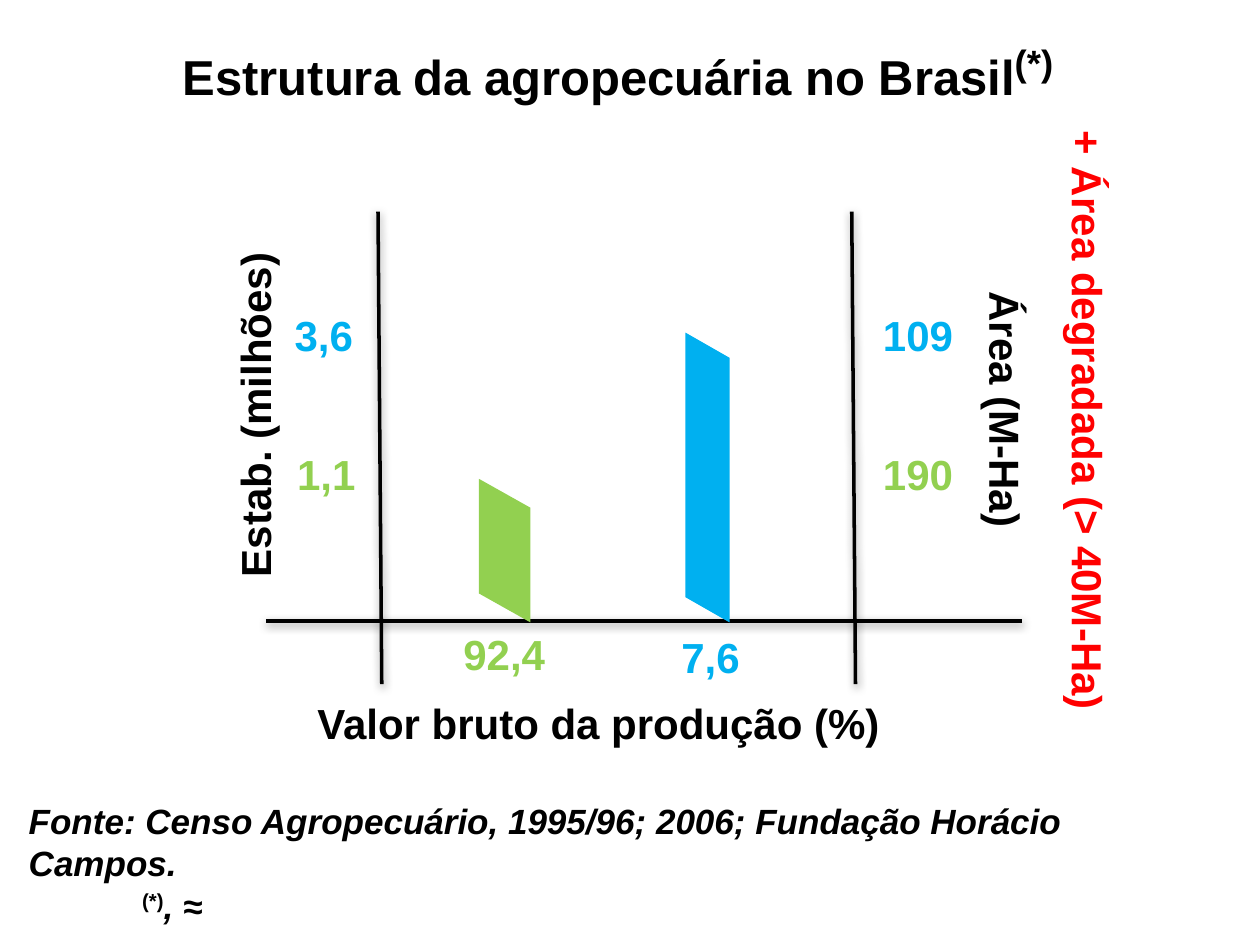
from lxml import etree
from pptx import Presentation
from pptx.dml.color import RGBColor
from pptx.enum.shapes import MSO_CONNECTOR
from pptx.enum.text import MSO_ANCHOR, MSO_AUTO_SIZE, PP_ALIGN
from pptx.util import Inches, Pt

STRAIGHT = MSO_CONNECTOR.STRAIGHT
TOP = MSO_ANCHOR.TOP
NO_AUTOFIT = MSO_AUTO_SIZE.NONE
CENTER = PP_ALIGN.CENTER
FONT = "Arial"
COLORS = {"black": "000000", "green": "92D050", "blue": "00B0F0", "red": "FF0000"}
LINE_SHADOW = (
    '<a:effectLst xmlns:a="http://schemas.openxmlformats.org/drawingml/2006/main">'
    '<a:outerShdw blurRad="63500" dist="20320" dir="5400000" rotWithShape="0">'
    '<a:srgbClr val="000000"><a:alpha val="38000"/></a:srgbClr>'
    '</a:outerShdw></a:effectLst>'
)


def format_run(run, size, color="black", italic=False, superscript=False):
    font = run.font
    font.name = FONT
    font.size = Pt(size)
    font.bold = True
    font.italic = italic
    font.color.rgb = RGBColor.from_string(COLORS[color])
    if superscript:
        run._r.get_or_add_rPr().set("baseline", "30000")


def add_label(text, left, top, width, height=0.5, size=24, color="black",
              rotation=0, italic=False):
    shape = slide.shapes.add_textbox(
        Inches(left), Inches(top), Inches(width), Inches(height))
    shape.rotation = rotation
    shape.text_frame.word_wrap = False
    shape.text_frame.text = text
    format_run(shape.text_frame.paragraphs[0].runs[0], size, color, italic)
    return shape


presentation = Presentation()
presentation.slide_width = Inches(10)
presentation.slide_height = Inches(7.5)
slide = presentation.slides.add_slide(presentation.slide_layouts[5])

title = slide.shapes.title
title.left, title.top = Inches(0.28), Inches(0.21)
title.width, title.height = Inches(9.25), Inches(0.57)
title.text_frame.text = "Estrutura da agropecuária no Brasil"
title.text_frame.auto_size = NO_AUTOFIT
title.text_frame.vertical_anchor = TOP
heading = title.text_frame.paragraphs[0]
heading.alignment = CENTER
format_run(heading.runs[0], 28)
title_mark = heading.add_run()
title_mark.text = "(*)"
format_run(title_mark, 36, superscript=True)

axes = [(3, 1.68, 3.03, 5.43), (6.76, 1.68, 6.79, 5.43), (8.11, 4.93, 2.11, 4.93)]
for axis in axes:
    connector = slide.shapes.add_connector(STRAIGHT, *map(Inches, axis))
    connector.line.color.rgb = RGBColor.from_string(COLORS["black"])
    connector.line.width = Pt(2)
    connector.element.spPr.append(etree.fromstring(LINE_SHADOW))

bars = [("green", 3.8, 4.21, 3.8, 0.23), ("blue", 5.44, 5.79, 2.64, 0.2)]
baseline = 4.94
for color, left, right, top, slant in bars:
    builder = slide.shapes.build_freeform(Inches(left), Inches(top))
    corners = [(right, top + slant), (right, baseline), (left, baseline - slant)]
    builder.add_line_segments([(Inches(x), Inches(y)) for x, y in corners], close=True)
    bar = builder.convert_to_shape()
    bar.fill.solid()
    bar.fill.fore_color.rgb = RGBColor.from_string(COLORS[color])
    bar.line.fill.background()
    bar.shadow.inherit = False

values = [
    ("109", 6.91, 2.41, 0.76, "blue"),
    ("190", 6.91, 3.51, 0.76, "green"),
    ("3,6", 2.24, 2.41, 0.67, "blue"),
    ("1,1", 2.26, 3.51, 0.67, "green"),
    ("7,6", 5.31, 4.96, 0.67, "blue"),
    ("92,4", 3.58, 4.94, 0.86, "green"),
]
for text, left, top, width, color in values:
    add_label(text, left, top, width, color=color)

add_label("Valor bruto da produção (%)", 2.42, 5.49, 5.19)
add_label("Estab. (milhões)", 0.62, 3.03, 2.8, rotation=270)
add_label("Área (M-Ha)", 6.94, 3.01, 2.09, rotation=90)
add_label("+ Área degradada (> 40M-Ha)", 6.22, 3.11, 4.84, color="red", rotation=90)

source = add_label(
    "Fonte: Censo Agropecuário, 1995/96; 2006; Fundação Horácio Campos.",
    0.13, 6.3, 9.47, 0.77, size=20, italic=True)
note = source.text_frame.add_paragraph()
note._p.get_or_add_pPr().set("marL", str(Inches(0.9)))
for text, is_mark in [("(*)", True), (", ≈", False)]:
    run = note.add_run()
    run.text = text
    format_run(run, 20, italic=not is_mark, superscript=is_mark)

presentation.save("out.pptx")
